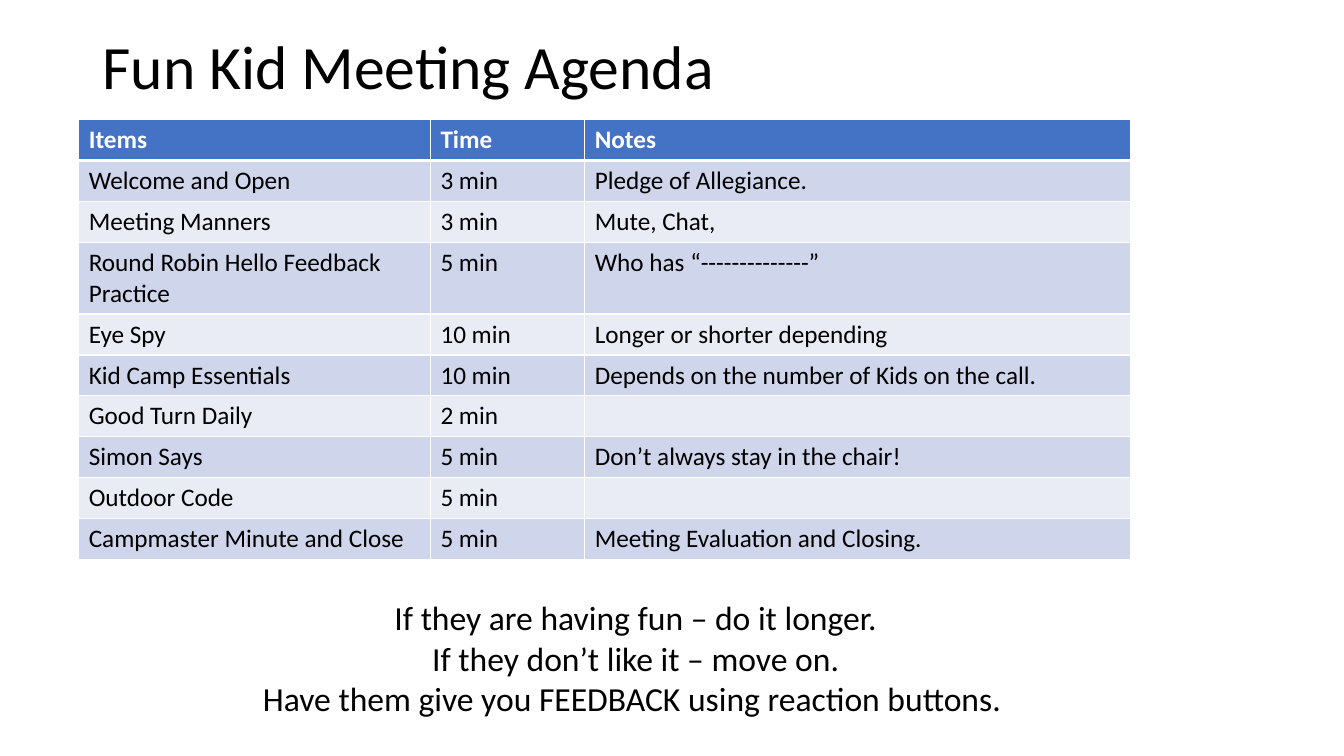
from dataclasses import dataclass

from lxml.etree import SubElement as Sub
from pptx import Presentation
from pptx.dml.color import RGBColor as Rgb
from pptx.enum.text import MSO_ANCHOR as Anchor, MSO_AUTO_SIZE as Fit, PP_ALIGN as Align
from pptx.oxml.ns import qn
from pptx.util import Pt

PX = 9525  # EMU per px, 96 px to the inch


@dataclass(frozen=True)
class Theme:
    font: str = "Calibri"
    ink: str = "000000"
    white: str = "FFFFFF"
    head: str = "4472C4"
    bands: tuple = ("CFD5EA", "E9EBF5")
    title: int = 44
    table: int = 18
    tips: int = 24


THEME = Theme()

AGENDA = [
    ("Items", "Time", "Notes"),
    ("Welcome and Open", "3 min", "Pledge of Allegiance."),
    ("Meeting Manners", "3 min", "Mute, Chat,"),
    ("Round Robin Hello Feedback Practice", "5 min", "Who has “--------------”"),
    ("Eye Spy", "10 min", "Longer or shorter depending"),
    ("Kid Camp Essentials", "10 min", "Depends on the number of Kids on the call."),
    ("Good Turn Daily", "2 min", ""),
    ("Simon Says", "5 min", "Don’t always stay in the chair!"),
    ("Outdoor Code", "5 min", ""),
    ("Campmaster Minute and Close", "5 min", "Meeting Evaluation and Closing."),
]
TIPS = [
    "If they are having fun – do it longer.",
    "If they don’t like it – move on.",
    "Have them give you FEEDBACK using reaction buttons. ",
]


def emu(*sizes):
    return [size * PX for size in sizes]


def write(frame, text, size, color=THEME.ink, bold=False, align=Align.LEFT, space=None):
    """Fill a text frame, one paragraph a line, in one format."""
    frame.text = text
    for para in frame.paragraphs:
        para.alignment = align
        para.line_spacing = space
        for run in para.runs:
            font = run.font
            font.name, font.size, font.bold = THEME.font, Pt(size), bold
            font.color.rgb = Rgb.from_string(color)


def edge(cell, side, width):
    """Draw one white cell border."""
    line = Sub(cell._tc.get_or_add_tcPr(), qn("a:ln" + side), w=str(Pt(width)))
    fill = Sub(line, qn("a:solidFill"))
    Sub(fill, qn("a:srgbClr"), val=THEME.white)


def add_title(slide, box):
    title = slide.shapes.title
    title.left, title.top, title.width, title.height = emu(*box)
    frame = title.text_frame
    frame.word_wrap = True
    frame.auto_size = Fit.NONE
    frame.vertical_anchor = Anchor.MIDDLE
    write(frame, "Fun Kid Meeting Agenda", THEME.title, space=0.9)


def add_agenda(slide, box, widths, step):
    table = slide.shapes.add_table(len(AGENDA), len(widths), *emu(*box)).table
    for col, width in zip(table.columns, widths):
        col.width = width * PX
    for r, (row, texts) in enumerate(zip(table.rows, AGENDA)):
        row.height = step * PX
        head = r == 0
        back = THEME.head if head else THEME.bands[(r - 1) % 2]
        for cell, text in zip(row.cells, texts):
            write(cell.text_frame, text, THEME.table, bold=head,
                  color=THEME.white if head else THEME.ink)
            # The rule under the header row is thicker
            for side in "LRTB":
                thick = (r, side) in ((0, "B"), (1, "T"))
                edge(cell, side, 3 if thick else 1)
            cell.fill.solid()
            cell.fill.fore_color.rgb = Rgb.from_string(back)


def add_tips(slide, box):
    frame = slide.shapes.add_textbox(*emu(*box)).text_frame
    frame.word_wrap = True
    frame.auto_size = Fit.SHAPE_TO_FIT_TEXT
    write(frame, "\n".join(TIPS), THEME.tips, align=Align.CENTER)


def main():
    deck = Presentation()
    deck.slide_width, deck.slide_height = emu(1280, 720)
    slide = deck.slides.add_slide(deck.slide_layouts[5])
    add_title(slide, (88, 18, 1104, 96))
    add_agenda(slide, (75, 114, 1002, 390), widths=(335, 147, 520), step=39)
    add_tips(slide, (29, 564, 1153, 126))
    deck.save("out.pptx")


if __name__ == "__main__":
    main()
